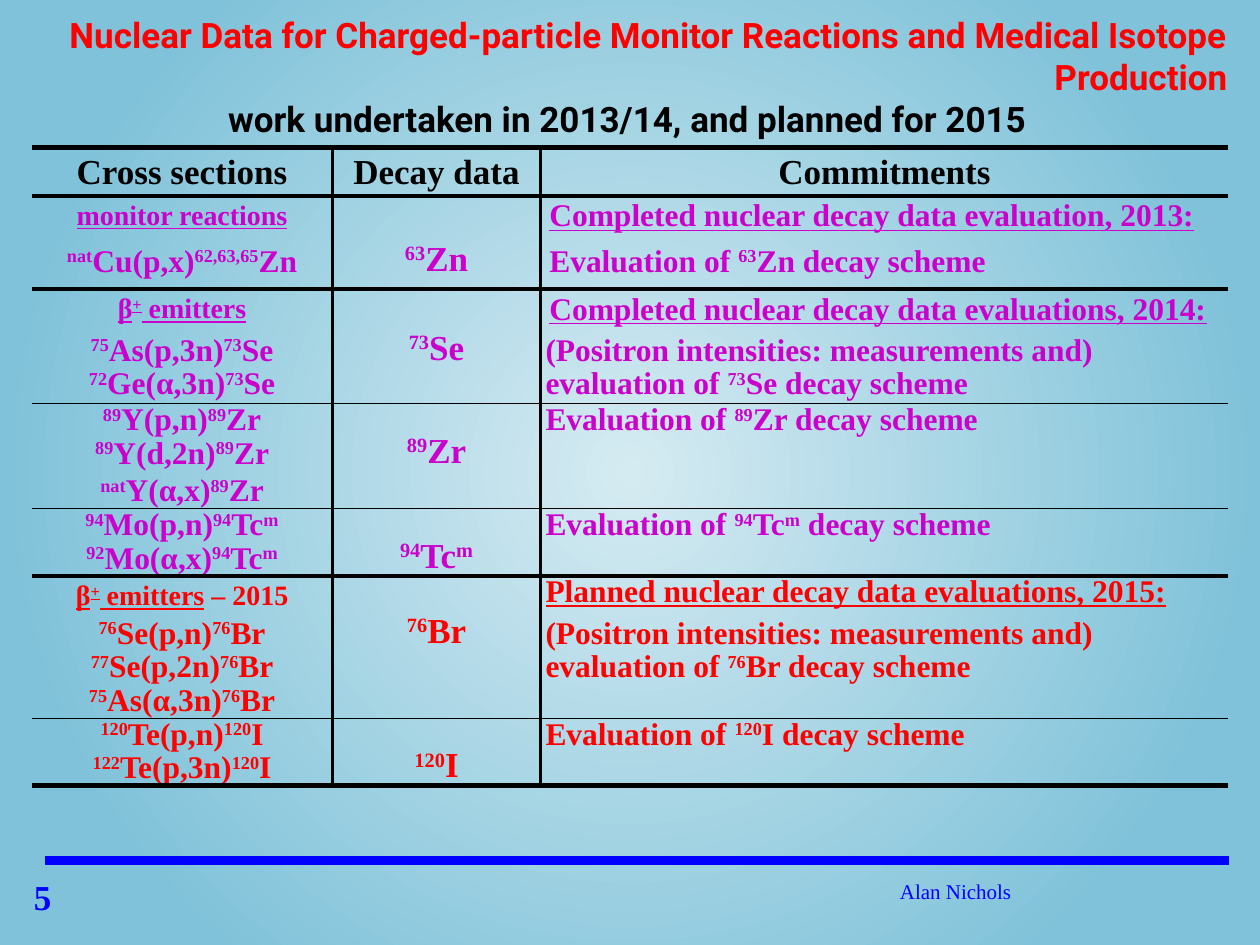
from pptx import Presentation
from pptx.dml.color import RGBColor
from pptx.enum.text import PP_ALIGN
from pptx.oxml import parse_xml
from pptx.oxml.ns import nsdecls, qn
from pptx.util import Inches, Pt

SERIF, SANS = "Times New Roman", "Roboto"
BLACK, BLUE, RED, PURPLE = "000000", "0000FF", "FF0000", "CC00CC"
CENTER, LEFT, RIGHT = PP_ALIGN.CENTER, PP_ALIGN.LEFT, PP_ALIGN.RIGHT

TITLE = [
    ("Nuclear Data for Charged-particle Monitor Reactions and Medical Isotope Production", RED, RIGHT),
    ("work undertaken in 2013/14, and planned for 2015", BLACK, CENTER),
]
COLUMNS = [2.39, 1.65, 5.46]
TOP_RULE, COLUMN_RULE = 3, 2.25
LOOSE, WIDE, TIGHT = 1.15, Pt(21.6), Pt(19.2)

# ^ switches superscript and _ switches underline on and off
# height, rule below, colour, line spacing, side inset, cells
ROWS = [
    (0.38, 2.25, BLACK, LOOSE, 0.07, ["Cross sections", "Decay data", "Commitments"]),
    (0.36, 0, PURPLE, WIDE, 0.07,
     ["_monitor reactions_", "", "_Completed nuclear decay data evaluation, 2013:_"]),
    (0.38, 2.25, PURPLE, WIDE, 0.07,
     ["^nat^Cu(p,x)^62,63,65^Zn", "^63^Zn", "Evaluation of ^63^Zn decay scheme"]),
    (0.36, 0, PURPLE, WIDE, 0.07,
     ["_β^+^ emitters_", "", "_Completed nuclear decay data evaluations, 2014:_"]),
    (0.55, 0.5, PURPLE, TIGHT, 0.04,
     ["^75^As(p,3n)^73^Se\n^72^Ge(α,3n)^73^Se", "^73^Se",
      "(Positron intensities: measurements and) evaluation of ^73^Se decay scheme"]),
    (0.83, 0.5, PURPLE, TIGHT, 0.04,
     ["^89^Y(p,n)^89^Zr\n^89^Y(d,2n)^89^Zr\n^nat^Y(α,x)^89^Zr", "^89^Zr",
      "Evaluation of ^89^Zr decay scheme"]),
    (0.53, 3, PURPLE, TIGHT, 0.04,
     ["^94^Mo(p,n)^94^Tc^m^\n^92^Mo(α,x)^94^Tc^m^", "^94^Tc^m^",
      "Evaluation of ^94^Tc^m^ decay scheme"]),
    (0.33, 0, RED, TIGHT, 0.04,
     ["_β^+^ emitters_ – 2015", "", "_Planned nuclear decay data evaluations, 2015:_"]),
    (0.8, 1, RED, TIGHT, 0.04,
     ["^76^Se(p,n)^76^Br\n^77^Se(p,2n)^76^Br\n^75^As(α,3n)^76^Br", "^76^Br",
      "(Positron intensities: measurements and) evaluation of ^76^Br decay scheme"]),
    (0.53, 3, RED, TIGHT, 0.04,
     ["^120^Te(p,n)^120^I\n^122^Te(p,3n)^120^I", "^120^I", "Evaluation of ^120^I decay scheme"]),
]
SECOND_LINE_ROWS = (5, 6, 9)  # isotope sits level with the second reaction


def rgb(color):
    return RGBColor.from_string(color)


def style(r, size, color, bold=True, name=SERIF):
    r.font.size, r.font.bold, r.font.name = Pt(size), bold, name
    r.font.color.rgb = rgb(color)


def add_marked_runs(p, text, size, color):
    """Write runs, switching underline at _ and superscript at ^."""
    for u, part in enumerate(text.split("_")):
        for sup, piece in enumerate(part.split("^")):
            if not piece:
                continue
            r = p.add_run()
            r.text = piece
            style(r, size, color)
            if u % 2:
                r.font.underline = True
            if sup % 2:
                r.font._element.set("baseline", "30000")


def set_borders(cell, **widths):
    tcPr = cell._tc.get_or_add_tcPr()
    for i, side in enumerate("LRTB"):
        width = widths[side]
        paint = f'<a:solidFill><a:srgbClr val="{BLACK}"/></a:solidFill>' if width else "<a:noFill/>"
        tcPr.insert(i, parse_xml(f'<a:ln{side} {nsdecls("a")} w="{Pt(width)}">{paint}</a:ln{side}>'))


def add_text(s, box, lines, size, bold=True, name=SERIF):
    tf = s.shapes.add_textbox(*map(Inches, box)).text_frame
    tf.word_wrap = True
    for i, (text, color, align) in enumerate(lines):
        p = tf.add_paragraph() if i else tf.paragraphs[0]
        p.text, p.alignment = text, align
        style(p.runs[0], size, color, bold, name)


def fill_cell(cell, row, col):
    _, _, color, spacing, inset, texts = ROWS[row]
    text = texts[col]
    cell.margin_left = cell.margin_right = Inches(inset)
    cell.margin_top = cell.margin_bottom = 0
    if col == 1 and row in SECOND_LINE_ROWS:
        cell.margin_top = TIGHT
    heading = col == 0 and text.startswith("_")
    size = 20 if row == 0 or col == 1 else 16 if heading else 18
    tf = cell.text_frame
    for i, line in enumerate(text.split("\n")):
        p = tf.add_paragraph() if i else tf.paragraphs[0]
        p.alignment = LEFT if row and col == 2 else CENTER
        p.line_spacing = LOOSE if heading else WIDE if line.startswith("^nat^") else spacing
        add_marked_runs(p, line, size, color)


def add_data_table(s):
    table = s.shapes.add_table(
        len(ROWS), len(COLUMNS), Inches(0.25), Inches(1.17),
        Inches(sum(COLUMNS)), Inches(sum(row[0] for row in ROWS))).table
    table.first_row = table.horz_banding = False
    for col, width in enumerate(COLUMNS):
        table.columns[col].width = Inches(width)
    last = len(COLUMNS) - 1
    for i, (height, below, *_) in enumerate(ROWS):
        table.rows[i].height = Inches(height)
        above = ROWS[i - 1][1] if i else TOP_RULE
        for j in range(len(COLUMNS)):
            cell = table.cell(i, j)
            fill_cell(cell, i, j)
            set_borders(cell, L=COLUMN_RULE if j else 0, R=COLUMN_RULE if j < last else 0,
                        T=above, B=below)
            cell.fill.background()


def set_background(s):
    fill = s.background.fill
    fill.gradient()
    for stop, (position, color) in zip(fill.gradient_stops, [(0, "D5EBF2"), (0.8, "80C2D9")]):
        stop.position, stop.color.rgb = position, rgb(color)
    grad = s._element.find(".//" + qn("a:gradFill"))
    grad.replace(grad.find(qn("a:lin")), parse_xml(
        f'<a:path {nsdecls("a")} path="circle">'
        '<a:fillToRect l="50000" t="50000" r="50000" b="50000"/></a:path>'))


def add_footer_rule(s):
    line = s.shapes.add_connector(1, Inches(0.36), Inches(6.83), Inches(9.75), Inches(6.83))
    line.line.color.rgb, line.line.width = rgb(BLUE), Pt(5.5)
    line._element.spPr.append(parse_xml(f'<a:effectLst {nsdecls("a")}/>'))


def main():
    prs = Presentation()
    prs.slide_width, prs.slide_height = Inches(10), Inches(7.5)
    s = prs.slides.add_slide(prs.slide_layouts[6])
    set_background(s)
    add_footer_rule(s)
    add_text(s, (0.17, 6.9, 0.83, 0.43), [("5", BLUE, LEFT)], 20)
    add_data_table(s)
    add_text(s, (0.12, 0.06, 9.72, 1.11), TITLE, 20, name=SANS)
    add_text(s, (5.5, 6.92, 4.17, 0.5), [("Alan Nichols", BLUE, CENTER)], 12, bold=False)
    prs.save("out.pptx")


if __name__ == "__main__":
    main()
